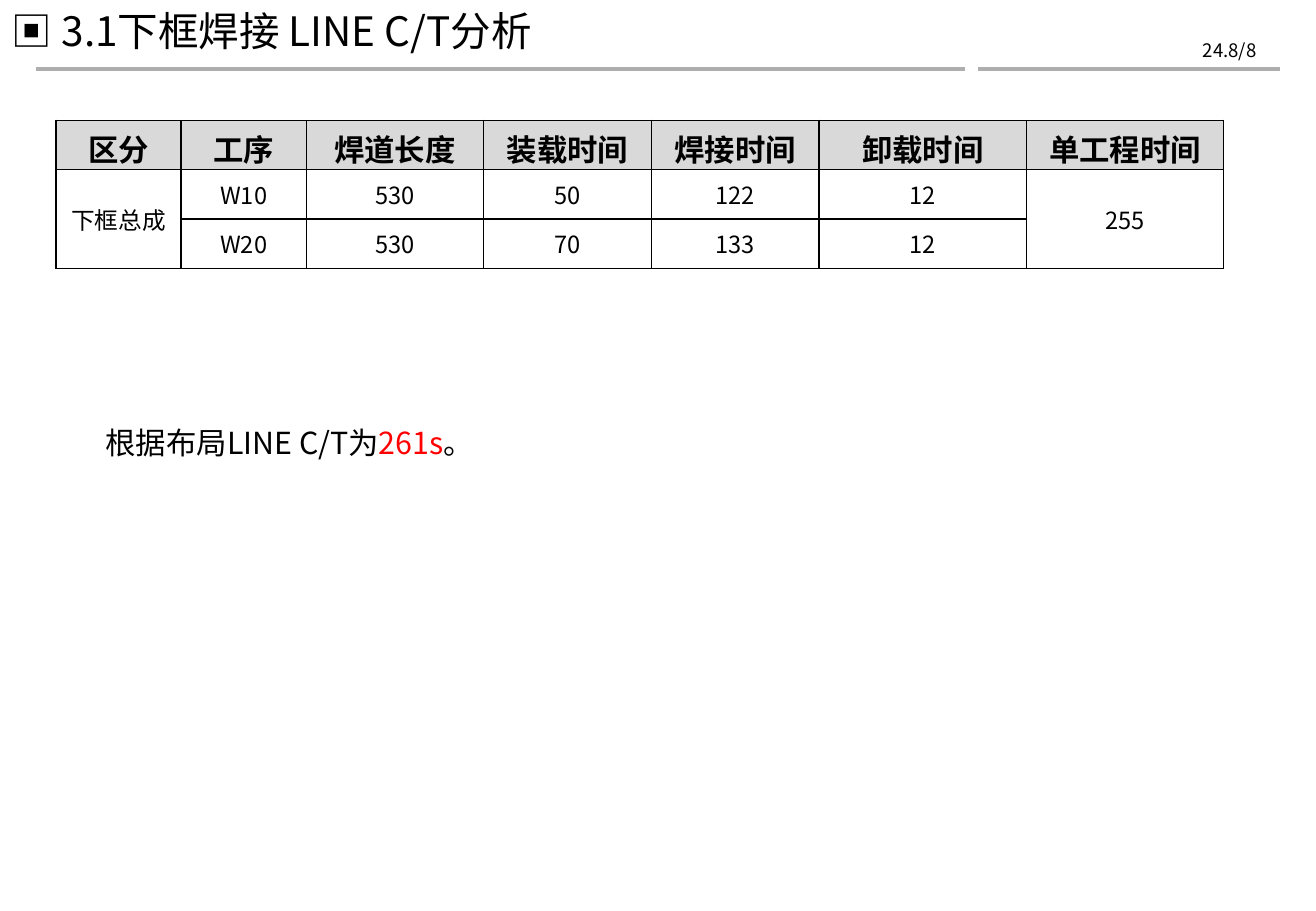
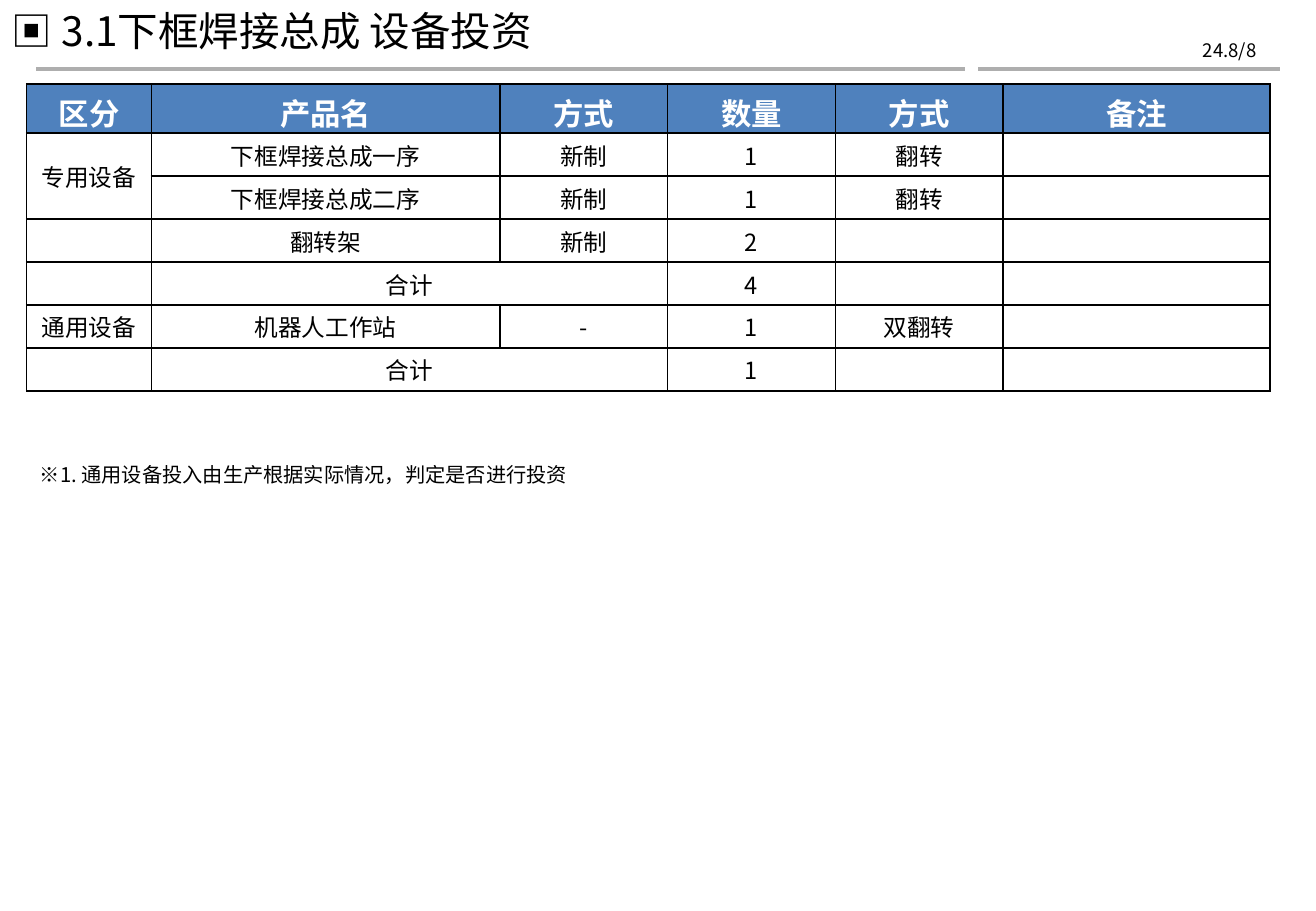
from dataclasses import dataclass

from lxml.etree import SubElement
from pptx import Presentation
from pptx.dml.color import RGBColor
from pptx.enum.shapes import MSO_CONNECTOR as Connector
from pptx.enum.text import MSO_ANCHOR as Anchor, MSO_AUTO_SIZE as AutoSize, PP_ALIGN as Align
from pptx.oxml import parse_xml
from pptx.oxml.ns import nsdecls, qn
from pptx.util import Inches, Pt

SLIDE_W, SLIDE_H = Inches(10.83), Inches(7.5)
SC, KR = "Noto Sans CJK SC", "Noto Sans CJK KR"
BLACK, WHITE, RED, RULE_GREY = "000000", "FFFFFF", "FF0000", "AEAEAE"
HEADER_GREY, HEADER_BLUE = "D9D9D9", "4F81BD"
RULE_SPANS = ((2.77, 73.31), (74.33, 97.23))
RULE_Y = 7.6
HEADER_SIZE, BODY_SIZE = 18, 14


@dataclass(frozen=True)
class Box:
    """A rectangle in percent of the slide's width and height."""
    left: float
    top: float
    width: float
    height: float


@dataclass(frozen=True)
class Piece:
    """A stretch of text in one colour."""
    text: str
    colour: str = BLACK


@dataclass(frozen=True)
class Caption:
    """One line of text in a box."""
    box: Box
    pieces: tuple[Piece, ...]
    size: int
    font: str = SC
    align: Align = Align.LEFT


@dataclass(frozen=True)
class Grid:
    """A table whose merges are (row, column, last row, last column)."""
    left: float
    top: float
    columns: tuple[float, ...]
    header_height: float
    row_height: float
    header_fill: str
    header_colour: str
    rows: tuple[tuple[str, ...], ...]
    merges: tuple[tuple[int, int, int, int], ...]


@dataclass(frozen=True)
class Page:
    """The content of one slide."""
    title: str
    grid: Grid
    remark: Caption


PAGES = (
    Page(
        "▣ 3.1下框焊接 LINE C/T分析",
        Grid(
            4.25, 13.2, (9.51, 9.51, 13.48, 12.74, 12.74, 15.79, 14.96),
            5.42, 5.42, HEADER_GREY, BLACK,
            (
                ("区分", "工序", "焊道长度", "装载时间", "焊接时间", "卸载时间", "单工程时间"),
                ("下框总成", "W10", "530", "50", "122", "12", "255"),
                ("", "W20", "530", "70", "133", "12", ""),
            ),
            ((1, 0, 2, 0), (1, 6, 2, 6)),
        ),
        Caption(
            Box(7.11, 45.87, 56.69, 5.33),
            (Piece("根据布局LINE C/T为"), Piece("261s", RED), Piece("。")),
            18,
        ),
    ),
    Page(
        "▣ 3.1下框焊接总成 设备投资",
        Grid(
            2.03, 9.2, (9.47, 26.5, 12.74, 12.74, 12.74, 20.31),
            5.42, 4.72, HEADER_BLUE, WHITE,
            (
                ("区分", "产品名", "方式", "数量", "方式", "备注"),
                ("专用设备", "下框焊接总成一序", "新制", "1", "翻转", ""),
                ("", "下框焊接总成二序", "新制", "1", "翻转", ""),
                ("", "翻转架", "新制", "2", "", ""),
                ("", "合计", "", "4", "", ""),
                ("通用设备", "机器人工作站", "-", "1", "双翻转", ""),
                ("", "合计", "", "1", "", ""),
            ),
            ((1, 0, 2, 0), (4, 1, 4, 2), (6, 1, 6, 2)),
        ),
        Caption(
            Box(2.12, 50.13, 89.47, 4),
            (Piece("※1. 通用设备投入由生产根据实际情况，判定是否进行投资"),),
            12,
        ),
    ),
)


def rgb(colour: str) -> RGBColor:
    """Turn a hex string into a colour."""
    return RGBColor.from_string(colour)


def across(percent: float) -> int:
    """Give a share of the slide's width."""
    return round(SLIDE_W * percent / 100)


def down(percent: float) -> int:
    """Give a share of the slide's height."""
    return round(SLIDE_H * percent / 100)


def style_run(run, size: int, colour: str, font: str = SC, bold: bool = False) -> None:
    """Set a run's font for Latin and East Asian text."""
    run.font.size, run.font.bold, run.font.name = Pt(size), bold, font
    run.font.color.rgb = rgb(colour)
    SubElement(run.font._element, qn("a:ea")).set("typeface", font)


def draw_caption(slide, caption: Caption) -> None:
    """Draw a line of text made of coloured pieces."""
    box = caption.box
    frame = slide.shapes.add_textbox(
        across(box.left), down(box.top), across(box.width), down(box.height)
    ).text_frame
    frame.word_wrap = True
    frame.auto_size = AutoSize.SHAPE_TO_FIT_TEXT
    line = frame.paragraphs[0]
    line.alignment = caption.align
    for piece in caption.pieces:
        run = line.add_run()
        run.text = piece.text
        style_run(run, caption.size, piece.colour, caption.font)


def draw_frame(slide, title: str) -> None:
    """Draw the rules, date and title that every slide has."""
    for start, end in RULE_SPANS:
        rule = slide.shapes.add_connector(
            Connector.STRAIGHT, across(start), down(RULE_Y), across(end), down(RULE_Y)
        )
        rule.line.color.rgb = rgb(RULE_GREY)
        rule.line.width = Pt(2)
        SubElement(rule._element.spPr, qn("a:effectLst"))
    draw_caption(slide, Caption(
        Box(86.33, 3.6, 10.06, 3.87), (Piece("24.8/8"),), 11, KR, Align.RIGHT
    ))
    draw_caption(slide, Caption(Box(0, 0, 84.21, 6.67), (Piece(title),), 24))


def add_borders(cell) -> None:
    """Outline a cell in black."""
    properties = cell._tc.get_or_add_tcPr()
    for place, side in enumerate("LRTB"):
        properties.insert(place, parse_xml(
            f'<a:ln{side} {nsdecls("a")} w="12700"><a:solidFill>'
            f'<a:srgbClr val="{BLACK}"/></a:solidFill></a:ln{side}>'
        ))


def fill_cell(cell, text: str, grid: Grid, is_header: bool) -> None:
    """Write and style one cell of a grid."""
    size = HEADER_SIZE if is_header else BODY_SIZE
    if is_header:
        cell.fill.solid()
        cell.fill.fore_color.rgb = rgb(grid.header_fill)
        cell.margin_top, cell.margin_bottom = Inches(0.05), 0
    else:
        cell.fill.background()
        cell.vertical_anchor = Anchor.MIDDLE
        cell.margin_top = cell.margin_bottom = Inches(0.03)
    add_borders(cell)
    cell.margin_left = cell.margin_right = Inches(0.05)
    line = cell.text_frame.paragraphs[0]
    line.alignment = Align.CENTER
    if text:
        line.text = text
        style_run(line.runs[0], size, grid.header_colour if is_header else BLACK, bold=is_header)
    else:
        line._p.get_or_add_endParaRPr().set("sz", str(size * 100))


def draw_grid(slide, grid: Grid) -> None:
    """Draw a table with its header and merged cells."""
    heights = [grid.header_height] + [grid.row_height] * (len(grid.rows) - 1)
    table = slide.shapes.add_table(
        len(grid.rows), len(grid.columns), across(grid.left), down(grid.top),
        across(sum(grid.columns)), down(sum(heights)),
    ).table
    table.horz_banding = False
    for column, width in zip(table.columns, grid.columns):
        column.width = across(width)
    for row, height in zip(table.rows, heights):
        row.height = down(height)
    for r, texts in enumerate(grid.rows):
        for c, text in enumerate(texts):
            fill_cell(table.cell(r, c), text, grid, r == 0)
    for top, left, bottom, right in grid.merges:
        table.cell(top, left).merge(table.cell(bottom, right))


def main() -> None:
    """Build the slides and save them."""
    deck = Presentation()
    deck.slide_width, deck.slide_height = SLIDE_W, SLIDE_H
    for page in PAGES:
        slide = deck.slides.add_slide(deck.slide_layouts[6])
        draw_frame(slide, page.title)
        draw_grid(slide, page.grid)
        draw_caption(slide, page.remark)
    deck.save("out.pptx")


if __name__ == "__main__":
    main()
